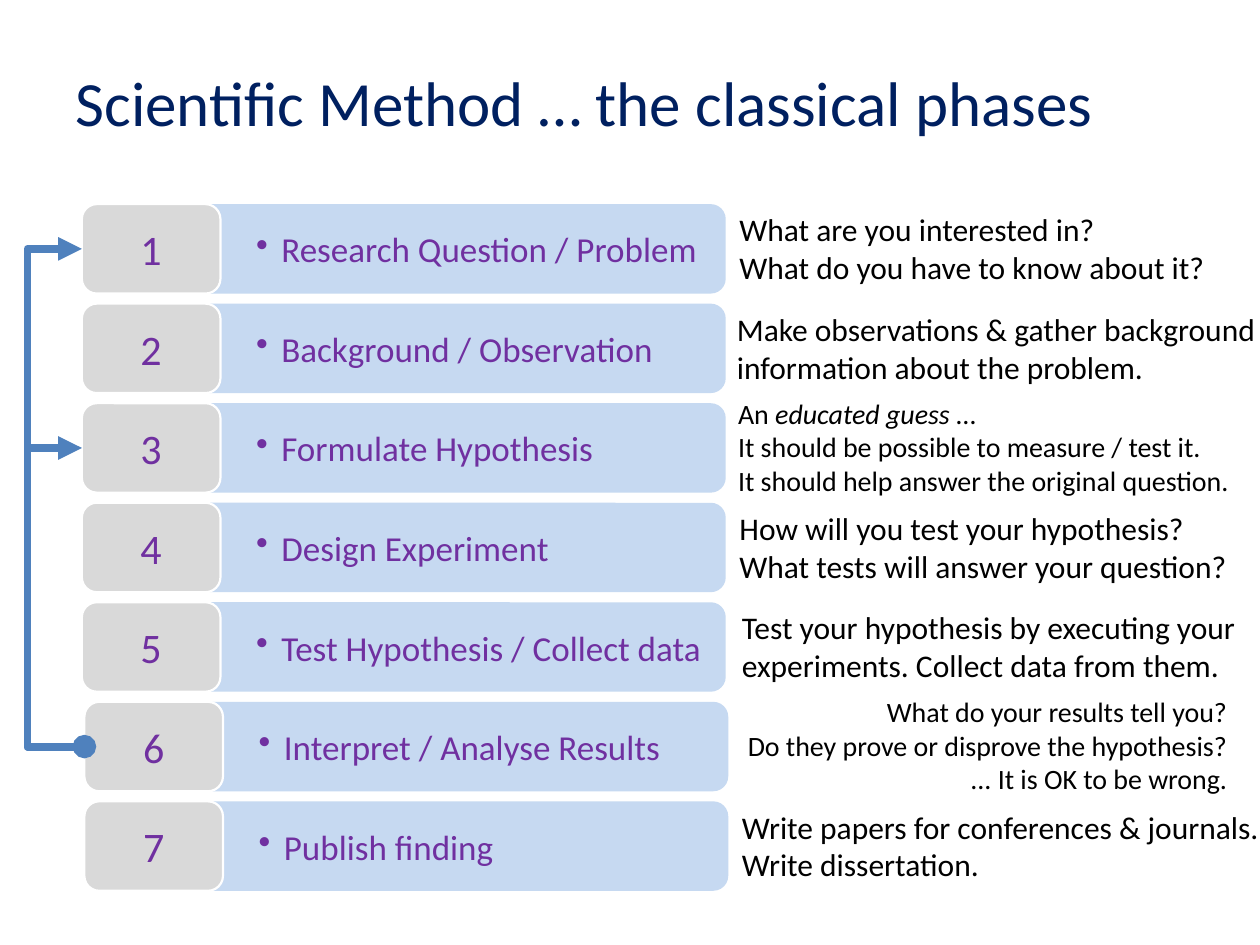
"""Build the slide on the seven classical phases of the scientific method."""
from lxml import etree
from pptx import Presentation
from pptx import util as u
from pptx.dml.color import RGBColor
from pptx.enum import shapes, text
from pptx.oxml.ns import qn

COLORS = {"title": "002060", "phase": "7030A0", "pill": "C6D9F1", "badge": "D9D9D9",
          "edge": "FFFFFF", "loop": "4F81BD", "note": "000000"}
LEFT, CENTER, RIGHT = text.PP_ALIGN.LEFT, text.PP_ALIGN.CENTER, text.PP_ALIGN.RIGHT

FIRST_TOP, PITCH, ROW_HEIGHT = 1.62, 0.79, 0.71
LOOP_LEFT = 0.22

# Phase, badge left, note left, note width, note size, note alignment, note lines
PHASES = [
    ("Research Question / Problem", 0.65, 5.77, 3.94, 18, LEFT,
     ["What are you interested in?", "What do you have to know about it?"]),
    ("Background / Observation", 0.65, 5.75, 4.36, 18, LEFT,
     ["Make observations & gather background", "information about the problem."]),
    ("Formulate Hypothesis", 0.65, 5.76, 4.14, 16, LEFT,
     ["An *educated guess *…", "It should be possible to measure / test it.",
      "It should help answer the original question."]),
    ("Design Experiment", 0.65, 5.77, 4.11, 18, LEFT,
     ["How will you test your hypothesis?", "What tests will answer your question?"]),
    ("Test Hypothesis / Collect data", 0.65, 5.79, 4.17, 18, LEFT,
     ["Test your hypothesis by executing your", "experiments. Collect data from them."]),
    ("Interpret / Analyse Results", 0.67, 5.78, 4.06, 16, RIGHT,
     ["What do your results tell you?", "Do they prove or disprove the hypothesis?",
      "... It is OK to be wrong."]),
    ("Publish finding", 0.67, 5.79, 4.35, 18, LEFT,
     ["Write papers for conferences & journals.", "Write dissertation."]),
]


def write(frame, lines, size, color, align=LEFT, bullet=False):
    """Fill a text frame; parts of a line between asterisks are italic."""
    for index, line in enumerate(lines):
        paragraph = frame.paragraphs[0] if index == 0 else frame.add_paragraph()
        paragraph.alignment = align
        if bullet:
            props = paragraph._p.get_or_add_pPr()
            props.set("marL", str(u.Inches(0.59)))
            props.set("indent", str(u.Inches(-0.2)))
            etree.SubElement(props, qn("a:buChar"), char="•")
        for part, words in enumerate(line.split("*")):
            run = paragraph.add_run()
            run.text = words
            run.font.name = "Calibri"
            run.font.size = u.Pt(size)
            run.font.color.rgb = RGBColor.from_string(COLORS[color])
            if part % 2:
                run.font.italic = True


class Deck:
    """Holds the presentation, its style and the current slide."""

    def __init__(self):
        self.prs = Presentation()
        self.prs.slide_width, self.prs.slide_height = u.Inches(10), u.Inches(7.5)
        self.slide = self.prs.slides.add_slide(self.prs.slide_layouts[5])

    def title(self, words):
        """Place the slide title."""
        heading = self.slide.shapes.title
        heading.left, heading.top = u.Inches(0.5), u.Inches(0.3)
        heading.width, heading.height = u.Inches(8.99), u.Inches(1.01)
        heading.text_frame.vertical_anchor = text.MSO_ANCHOR.MIDDLE
        write(heading.text_frame, [words], 36, "title")

    def box(self, left, top, width, fill, words, size, edge=None, **style):
        """Add a rounded row element with one line of text."""
        box = self.slide.shapes.add_shape(
            shapes.MSO_SHAPE.ROUNDED_RECTANGLE, u.Inches(left), u.Inches(top),
            u.Inches(width), u.Inches(ROW_HEIGHT))
        box.shadow.inherit = False
        box.fill.solid()
        box.fill.fore_color.rgb = RGBColor.from_string(COLORS[fill])
        if edge:
            box.line.color.rgb = RGBColor.from_string(COLORS[edge])
            box.line.width = u.Pt(1.25)
        else:
            box.line.fill.background()
        box.text_frame.word_wrap = True
        box.text_frame.vertical_anchor = text.MSO_ANCHOR.MIDDLE
        write(box.text_frame, [words], size, "phase", **style)

    def note(self, left, middle, width, lines, size, align):
        """Add an unwrapped note centred on the middle of its row."""
        height = 0.71 if len(lines) == 2 else 0.92
        note = self.slide.shapes.add_textbox(
            u.Inches(left), u.Inches(middle - height / 2), u.Inches(width), u.Inches(height))
        note.text_frame.word_wrap = False
        note.text_frame.auto_size = text.MSO_AUTO_SIZE.SHAPE_TO_FIT_TEXT
        write(note.text_frame, lines, size, "note", align=align)

    def loop(self, start, end, head=None):
        """Add an elbow arrow from start back up to end around the left side."""
        (start_x, start_y), (end_x, end_y) = start, end
        loop = self.slide.shapes.add_connector(
            shapes.MSO_CONNECTOR.ELBOW, u.Inches(end_x), u.Inches(end_y),
            u.Inches(start_x), u.Inches(start_y))
        loop.line.color.rgb = RGBColor.from_string(COLORS["loop"])
        loop.line.width = u.Pt(4.5)
        props = loop._element.spPr
        props.find(qn("a:xfrm")).set("rot", "10800000")
        bend = round((start_x - LOOP_LEFT) / (start_x - end_x) * 100000)
        guides = props.find(qn("a:prstGeom")).get_or_add_avLst()
        etree.SubElement(guides, qn("a:gd"), name="adj1", fmla=f"val {bend}")
        line = props.find(qn("a:ln"))
        if head:
            etree.SubElement(line, qn("a:headEnd"), type=head)
        etree.SubElement(line, qn("a:tailEnd"), type="triangle")
        etree.SubElement(props, qn("a:effectLst"))


def main():
    """Draw the phases, the feedback loops and the notes."""
    deck = Deck()
    deck.title("Scientific Method … the classical phases")
    middles = [FIRST_TOP + PITCH * row + ROW_HEIGHT / 2 for row in range(len(PHASES))]

    for number, (phase, left, *_) in enumerate(PHASES, 1):
        top = FIRST_TOP + PITCH * (number - 1)
        deck.box(left + 0.86, top, 4.25, "pill", phase, 20, bullet=True)
        deck.box(left, top, 1.1, "badge", str(number), 24, edge="edge", align=CENTER)

    interpret = (0.67, middles[5])
    deck.loop(interpret, (0.65, middles[0]))
    deck.loop(interpret, (0.65, middles[2]), head="oval")

    for middle, (_, _, left, width, size, align, lines) in zip(middles, PHASES):
        deck.note(left, middle, width, lines, size, align)

    deck.prs.save("out.pptx")


if __name__ == "__main__":
    main()
